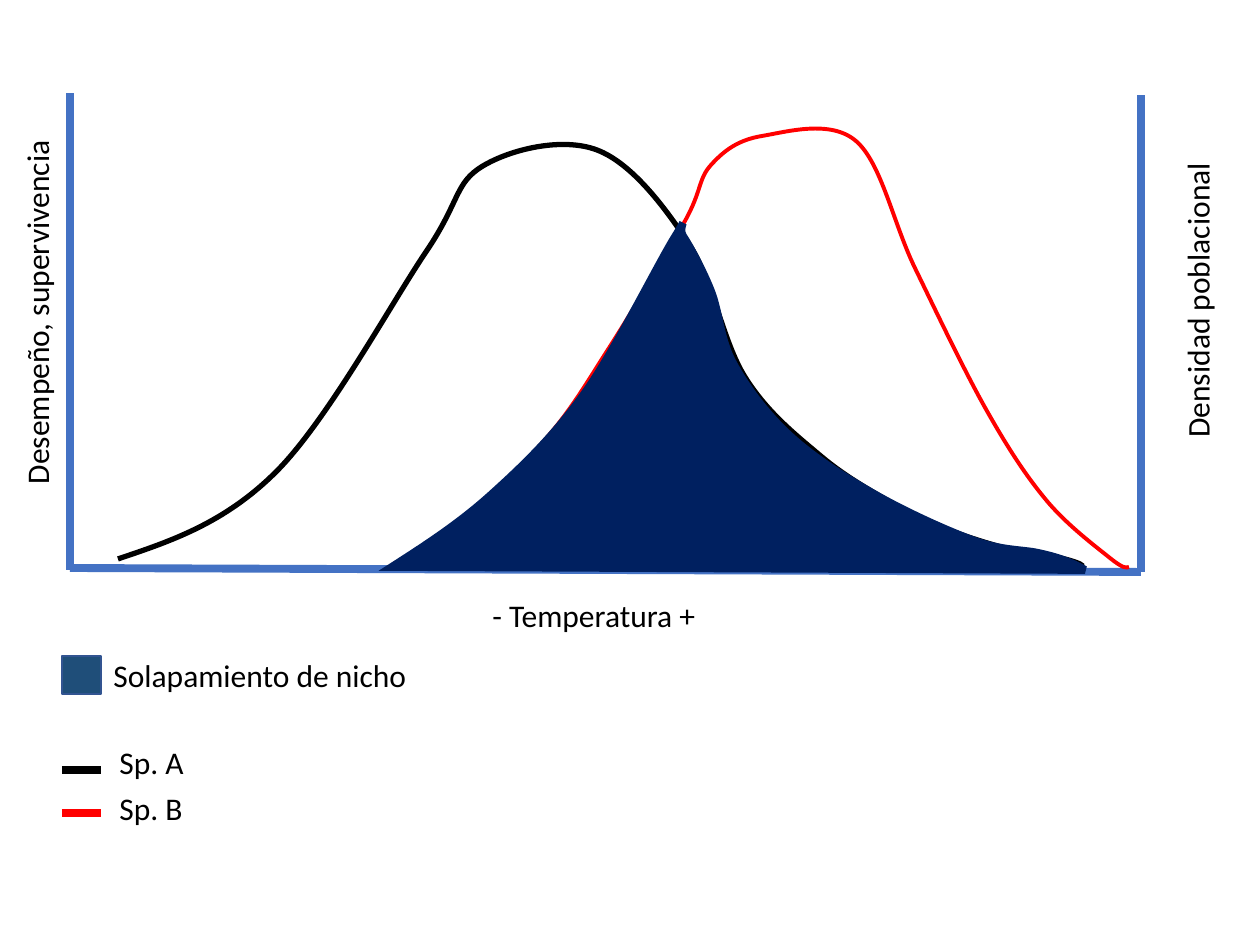
from lxml.etree import SubElement
from pptx import Presentation
from pptx.dml.color import RGBColor as RGB
from pptx.enum.shapes import MSO_CONNECTOR as LINK, MSO_SHAPE as KIND
from pptx.enum.text import MSO_AUTO_SIZE as FIT
from pptx.oxml.ns import qn
from pptx.util import Emu, Pt

SCALE = 914400 / 126
BLACK = RGB(0x00, 0x00, 0x00)
RED = RGB(0xFF, 0x00, 0x00)
BLUE = RGB(0x44, 0x72, 0xC4)
NAVY = RGB(0x00, 0x20, 0x60)
TEAL = RGB(0x1F, 0x4E, 0x79)
EDGE = RGB(0x32, 0x54, 0x91)

CURVE_A = [(118, 559), (276, 472), (426, 252), (483, 166), (597, 150),
           (689, 244), (745, 377), (822, 457), (901, 508), (954, 532),
           (1016, 551), (1056, 557), (1080, 564), (1079, 568)]
CURVE_B = [(393, 564), (444, 536), (544, 441), (609, 348), (685, 221),
           (711, 165), (762, 136), (856, 141), (915, 268), (987, 411),
           (1047, 501), (1110, 558), (1129, 567)]
OVERLAP = [(392, 567), (491, 495), (585, 393), (675, 237), (683, 236),
           (711, 291), (733, 363), (789, 435), (874, 494), (975, 541),
           (1038, 553), (1066, 561), (1085, 570)]


def px(num):
    return Emu(round(num * SCALE))


def set_line(shape, color, width):
    shape.line.color.rgb = color
    shape.line.width = Pt(width)


def add_line(shapes, start, end, color):
    line = shapes.add_connector(LINK.STRAIGHT, *map(px, start + end))
    set_line(line, color, 4.5)
    SubElement(line._element.spPr, qn("a:effectLst"))


def add_text(shapes, text, left, top, width, turn=0):
    box = shapes.add_textbox(px(left), px(top), px(width), px(50))
    box.rotation = turn
    frame = box.text_frame
    frame.word_wrap = False
    frame.auto_size = FIT.SHAPE_TO_FIT_TEXT
    para = frame.paragraphs[0]
    para.text = text
    para.font.name = "Calibri"
    para.font.size = Pt(18)
    para.font.color.rgb = BLACK


def smooth(knots):
    last = len(knots) - 1
    slopes = [tuple((b - a) / 6 for a, b in zip(knots[max(i - 1, 0)], knots[min(i + 1, last)]))
              for i in range(last + 1)]
    points = []
    for i in range(last):
        (x1, y1), (x2, y2) = knots[i:i + 2]
        (u1, v1), (u2, v2) = slopes[i:i + 2]
        out, into = (x1 + u1, y1 + v1), (x2 - u2, y2 - v2)
        if i == 0:
            out = ((x1 + into[0]) / 2, (y1 + into[1]) / 2)
        if i == last - 1:
            into = ((x2 + out[0]) / 2, (y2 + out[1]) / 2)
        points += [out, into, (x2, y2)]
    return points


def add_curve(shapes, knots, color, width, fill=None):
    pen = shapes.build_freeform(*map(px, knots[0]))
    points = [(px(x), px(y)) for x, y in smooth(knots)]
    pen.add_line_segments(points, close=fill is not None)
    shape = pen.convert_to_shape()
    steps = list(shape._element.iter(qn("a:lnTo")))
    for i in range(0, len(steps), 3):
        bend = steps[i]
        bend.tag = qn("a:cubicBezTo")
        for step in steps[i + 1:i + 3]:
            bend.append(step[0])
            step.getparent().remove(step)
    shape.shadow.inherit = False
    if fill is None:
        shape.fill.background()
    else:
        shape.fill.solid()
        shape.fill.fore_color.rgb = fill
    set_line(shape, color, width)
    SubElement(shape._element.spPr.find(qn("a:ln")), qn("a:miter"), lim="800000")


def add_box(shapes, left, top, width, height):
    box = shapes.add_shape(KIND.RECTANGLE, *map(px, (left, top, width, height)))
    box.shadow.inherit = False
    box.fill.solid()
    box.fill.fore_color.rgb = TEAL
    set_line(box, EDGE, 1)


def add_graph(shapes):
    add_line(shapes, (70, 568), (1141, 572), BLUE)
    add_line(shapes, (70, 570), (70, 93), BLUE)
    add_curve(shapes, CURVE_A, BLACK, 3)
    add_line(shapes, (1141, 572), (1141, 95), BLUE)
    add_text(shapes, "Desempeño, supervivencia", -150, 285, 373, 270)
    add_text(shapes, "Densidad poblacional", 1045, 273, 304, 270)
    add_text(shapes, "- Temperatura +", 480, 590, 231)


def add_legend(shapes):
    add_box(shapes, 62, 656, 39, 38)
    add_text(shapes, "Solapamiento de nicho", 101, 650, 323)
    for name, color, mid, top in (("Sp. A", BLACK, 770, 737), ("Sp. B", RED, 813, 783)):
        add_line(shapes, (62, mid), (101, mid), color)
        add_text(shapes, name, 107, top, 90)


def main():
    deck = Presentation()
    deck.slide_width, deck.slide_height = px(1260), px(945)
    shapes = deck.slides.add_slide(deck.slide_layouts[6]).shapes
    add_graph(shapes.add_group_shape().shapes)
    add_curve(shapes, CURVE_B, RED, 2.25)
    add_curve(shapes, OVERLAP, NAVY, 4.5, NAVY)
    add_legend(shapes)
    deck.save("out.pptx")


if __name__ == "__main__":
    main()
